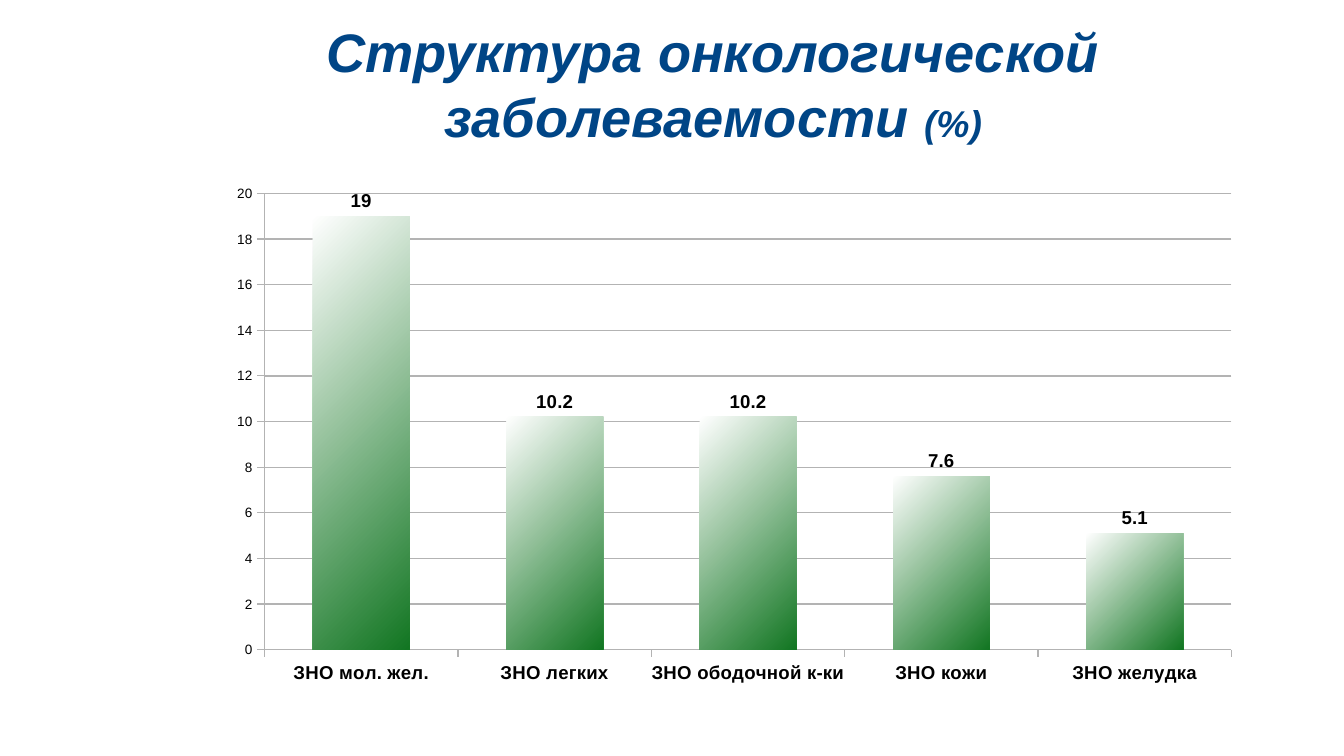
import pptx
import pptx.chart.data
import pptx.dml.color
import pptx.enum.chart
import pptx.enum.text
import pptx.oxml
import pptx.oxml.ns
import pptx.util
from pptx.util import Cm

FONT_NAME = "Arial"
WHITE = pptx.dml.color.RGBColor(0xFF, 0xFF, 0xFF)
BLACK = pptx.dml.color.RGBColor(0x00, 0x00, 0x00)
NAVY = pptx.dml.color.RGBColor(0x00, 0x45, 0x86)
GREEN = pptx.dml.color.RGBColor(0x12, 0x76, 0x22)
GREY = pptx.dml.color.RGBColor(0xB3, 0xB3, 0xB3)

TITLE_RUNS = [("Структура онкологической заболеваемости ", 32), ("(%)", 22)]
INCIDENCE = {
    "ЗНО мол. жел.": 19,
    "ЗНО легких": 10.2,
    "ЗНО ободочной к-ки": 10.2,
    "ЗНО кожи": 7.6,
    "ЗНО желудка": 5.1,
}
PLOT_LAYOUT = {"x": 0.046, "y": 0.034, "w": 0.933, "h": 0.879}


def set_attributes(target, values):
    for name, value in values.items():
        setattr(target, name, value)


def format_font(font, size, color, bold=False, italic=False):
    set_attributes(font, {
        "name": FONT_NAME, "size": pptx.util.Pt(size), "bold": bold, "italic": italic,
    })
    font.color.rgb = color


def format_line(line):
    line.color.rgb = GREY
    line.width = pptx.util.Pt(0.75)


def add_title(slide):
    text_frame = slide.shapes.add_textbox(Cm(5.05), Cm(0.33), Cm(19.61), Cm(2.82)).text_frame
    set_attributes(text_frame, {
        "word_wrap": True, "vertical_anchor": pptx.enum.text.MSO_ANCHOR.MIDDLE,
    })
    paragraph = text_frame.paragraphs[0]
    paragraph.alignment = pptx.enum.text.PP_ALIGN.CENTER
    for text, size in TITLE_RUNS:
        run = paragraph.add_run()
        run.text = text
        format_font(run.font, size, NAVY, bold=True, italic=True)


def format_axis(axis, size, bold, values):
    set_attributes(axis, {
        "major_tick_mark": pptx.enum.chart.XL_TICK_MARK.OUTSIDE,
        "minor_tick_mark": pptx.enum.chart.XL_TICK_MARK.NONE,
        **values,
    })
    format_font(axis.tick_labels.font, size, BLACK, bold)
    format_line(axis.format.line)


def format_columns(plot):
    plot.gap_width = 100
    plot.vary_by_categories = False
    series = plot.series[0]
    series.invert_if_negative = False
    fill = series.format.fill
    fill.gradient()
    fill.gradient_angle = 315
    for stop, color in zip(fill.gradient_stops, (WHITE, GREEN)):
        stop.color.rgb = color
    series.format.line.fill.background()
    labels = series.data_labels
    set_attributes(labels, {
        "show_value": True,
        "position": pptx.enum.chart.XL_LABEL_POSITION.OUTSIDE_END,
        "number_format": "General",
        "number_format_is_linked": False,
    })
    format_font(labels.font, 11, BLACK, bold=True)


def place_plot_area(chart):
    plot_area = chart.plots[0]._element.getparent()
    for layout in plot_area.findall(pptx.oxml.ns.qn("c:layout")):
        plot_area.remove(layout)
    modes = {"layoutTarget": "inner", "xMode": "edge", "yMode": "edge"}
    items = "".join(
        f'<c:{name} val="{value}"/>' for name, value in {**modes, **PLOT_LAYOUT}.items()
    )
    plot_area.insert(0, pptx.oxml.parse_xml(
        f'<c:layout {pptx.oxml.ns.nsdecls("c")}><c:manualLayout>{items}</c:manualLayout></c:layout>'
    ))


def add_incidence_chart(slide):
    chart_data = pptx.chart.data.CategoryChartData()
    chart_data.categories = list(INCIDENCE)
    chart_data.add_series("Series 1", list(INCIDENCE.values()))
    chart = slide.shapes.add_chart(
        pptx.enum.chart.XL_CHART_TYPE.COLUMN_CLUSTERED,
        Cm(4.52), Cm(3.66), Cm(21.59), Cm(10.82), chart_data,
    ).chart
    set_attributes(chart, {"has_legend": False, "has_title": False})
    format_font(chart.font, 10, BLACK)
    format_axis(chart.category_axis, 11, True, {"has_major_gridlines": False})
    format_axis(chart.value_axis, 8, False, {
        "minimum_scale": 0, "maximum_scale": 20, "major_unit": 2, "has_major_gridlines": True,
    })
    format_line(chart.value_axis.major_gridlines.format.line)
    format_columns(chart.plots[0])
    place_plot_area(chart)


def main():
    presentation = pptx.Presentation()
    set_attributes(presentation, {"slide_width": Cm(28), "slide_height": Cm(15.75)})
    slide = presentation.slides.add_slide(presentation.slide_layouts[6])
    add_title(slide)
    add_incidence_chart(slide)
    presentation.save("out.pptx")


if __name__ == "__main__":
    main()
